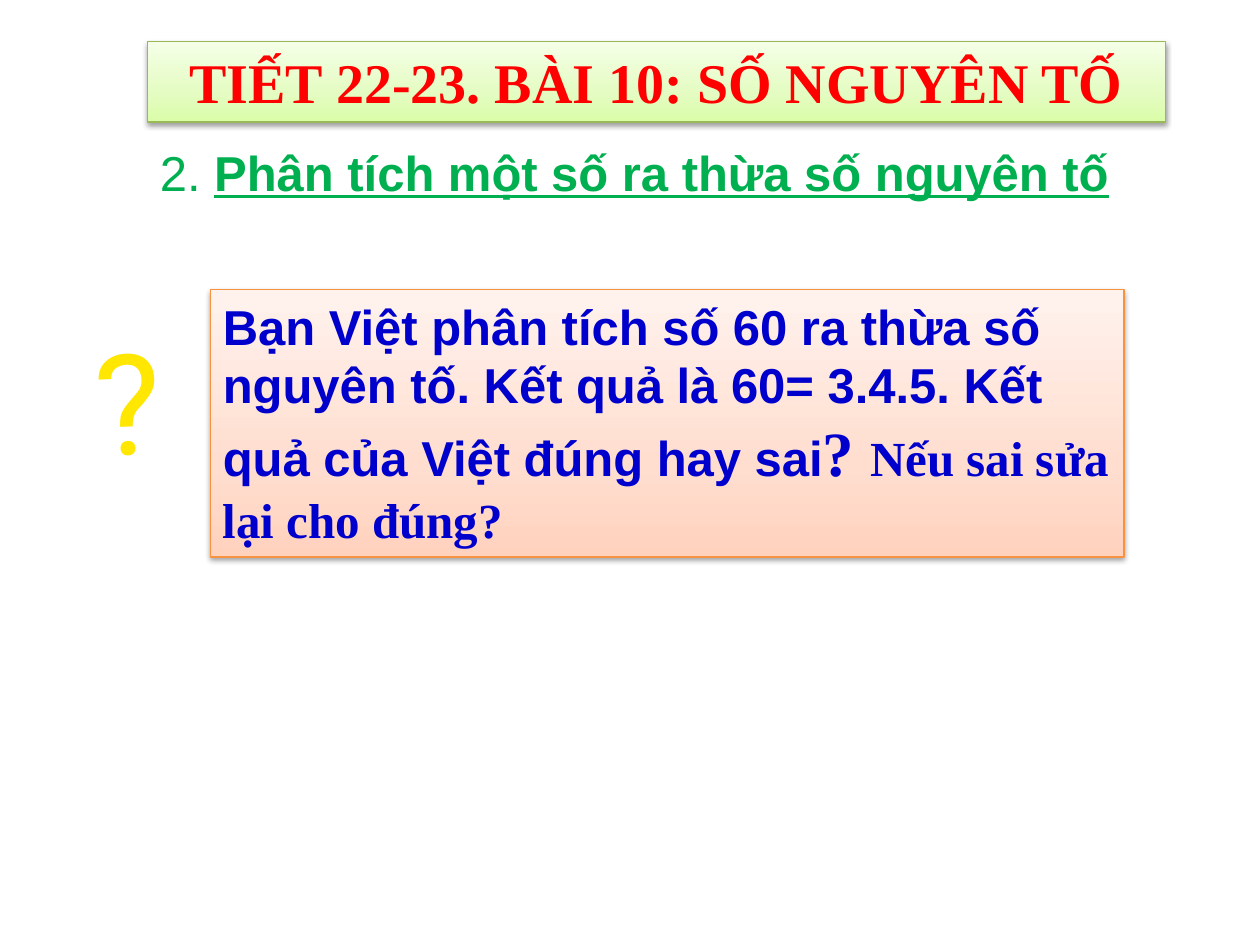
from copy import deepcopy

from lxml import etree
from pptx import Presentation
from pptx.dml.color import RGBColor
from pptx.enum.shapes import MSO_SHAPE
from pptx.enum.text import MSO_ANCHOR, MSO_AUTO_SIZE, PP_ALIGN
from pptx.oxml import parse_xml
from pptx.util import Pt

RECTANGLE = MSO_SHAPE.RECTANGLE
TOP = MSO_ANCHOR.TOP
FIT_SHAPE, NO_FIT = MSO_AUTO_SIZE.SHAPE_TO_FIT_TEXT, MSO_AUTO_SIZE.NONE
LEFT, CENTER = PP_ALIGN.LEFT, PP_ALIGN.CENTER
DRAWING_NS = "http://schemas.openxmlformats.org/drawingml/2006/main"
SANS, SERIF, SYMBOL = "Arial", "Times New Roman", "Roboto"
GREEN_STOPS = [(0, "DAFDA7"), (0.35, "E4FCC2"), (1, "F5FFE7")]
PEACH_STOPS = [(0, "FFD2BD"), (0.35, "FFDED0"), (1, "FFF2ED")]
FLAME_STOPS = [(0, "FFE701"), (1, "FE3E02")]


def color(value):
    """Turn a hex string into a colour."""
    return RGBColor.from_string(value)


def set_gradient(fill, owner, stops, angle):
    """Give a fill a linear gradient with any number of stops."""
    fill.gradient()
    fill.gradient_angle = angle
    first = owner.xpath(".//a:gs")[0]
    for _ in stops[2:]:
        first.addnext(deepcopy(first))
    for stop, (position, value) in zip(fill.gradient_stops, stops):
        stop.position = position
        stop.color.rgb = color(value)


def add_shadow(panel):
    """Add a soft shadow below a panel."""
    panel.shadow.inherit = False
    effects = panel.element.spPr.find(f"{{{DRAWING_NS}}}effectLst")
    effects.append(parse_xml(
        f'<a:outerShdw xmlns:a="{DRAWING_NS}" blurRad="{Pt(3.1)}" dist="{Pt(1.6)}"'
        ' dir="5400000" rotWithShape="0"><a:srgbClr val="000000">'
        '<a:alpha val="38000"/></a:srgbClr></a:outerShdw>'))


def write(paragraph, text, font=SANS, size=28, ink="000000", bold=False, underline=False):
    """Append formatted text to a paragraph and return its run."""
    run = paragraph.add_run()
    run.text = text
    run.font.name, run.font.size = font, Pt(size)
    run.font.bold, run.font.underline = bold, underline
    run.font.color.rgb = color(ink)
    return run


def first_paragraph(holder, align=LEFT, wrap=True):
    """Set up a text frame and return its first paragraph."""
    frame = holder.text_frame
    frame.word_wrap = wrap
    frame.auto_size = FIT_SHAPE if wrap else NO_FIT
    frame.vertical_anchor = TOP
    frame.paragraphs[0].alignment = align
    return frame.paragraphs[0]


def add_panel(slide, box, stops, border):
    """Add a shadowed rectangle with a gradient rising from its base."""
    panel = slide.shapes.add_shape(RECTANGLE, *map(Pt, box))
    set_gradient(panel.fill, panel.element.spPr, stops, 90)
    panel.line.color.rgb = color(border)
    panel.line.width = Pt(0.75)
    add_shadow(panel)
    return panel


def add_title(slide, box):
    """Place the lesson title banner."""
    banner = add_panel(slide, box, GREEN_STOPS, "98B955")
    write(first_paragraph(banner, CENTER), "TIẾT 22-23. BÀI 10: SỐ NGUYÊN TỐ",
          font=SERIF, size=32, ink="FF0000", bold=True)


def add_heading(slide, box):
    """Place the numbered section heading."""
    heading = first_paragraph(slide.shapes.add_textbox(*map(Pt, box)))
    write(heading, "2. ", ink="00B050")
    write(heading, "Phân tích một số ra thừa số nguyên tố",
          ink="00B050", bold=True, underline=True)


def add_question_mark(slide, box):
    """Place the large tilted question mark."""
    mark = slide.shapes.add_textbox(*map(Pt, box))
    mark.rotation = 357.3
    run = write(first_paragraph(mark, CENTER, wrap=False), "?", font=SYMBOL, size=80)
    set_gradient(run.font.fill, mark.element, FLAME_STOPS, 276)


def add_exercise(slide, box):
    """Place the exercise panel."""
    exercise = first_paragraph(add_panel(slide, box, PEACH_STOPS, "F69240"))
    for text, font, size in (
        ("Bạn Việt phân tích số 60 ra thừa số nguyên tố. Kết quả là 60= 3.4.5. "
         "Kết quả của Việt đúng hay sai", SANS, 28),
        ("? ", SERIF, 36),
        ("Nếu sai sửa lại cho đúng?", SERIF, 28),
    ):
        write(exercise, text, font=font, size=size, ink="0000CC", bold=True)


def main():
    """Build and save the slide."""
    deck = Presentation()
    deck.slide_width, deck.slide_height = Pt(720), Pt(540)
    slide = deck.slides.add_slide(deck.slide_layouts[6])
    add_question_mark(slide, (52.56, 176.4, 41.04, 98.64))
    add_title(slide, (84.24, 23.76, 581.76, 46.08))
    add_heading(slide, (84.24, 77.76, 581.76, 41.04))
    add_exercise(slide, (120.24, 165.6, 522, 152.64))
    deck.save("out.pptx")


if __name__ == "__main__":
    main()
